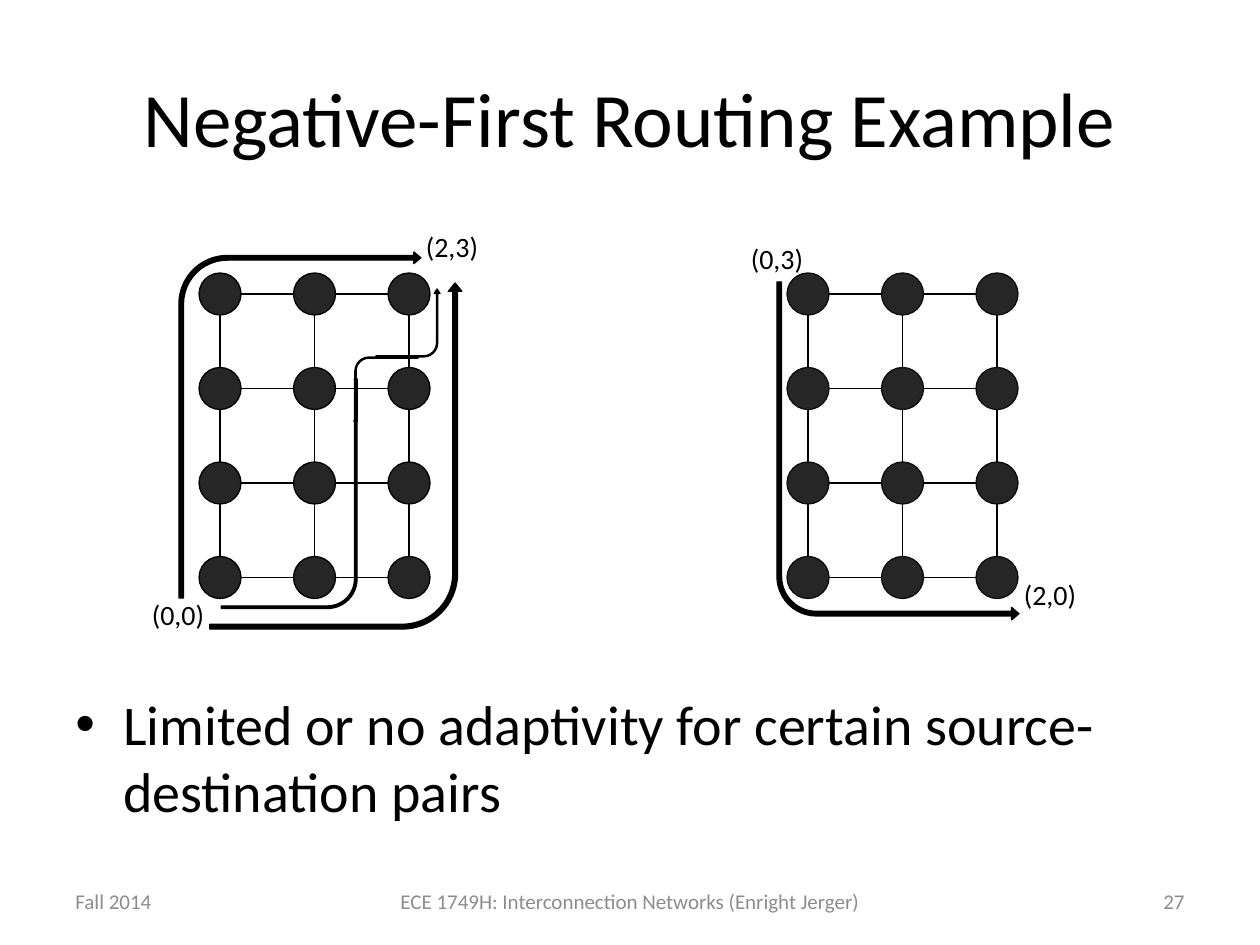
"""Build the slide on negative-first routing with two mesh networks."""
import pptx
import pptx.dml.color
import pptx.enum.shapes
import pptx.enum.text
import pptx.oxml
import pptx.oxml.ns
import pptx.util

SHAPE = pptx.enum.shapes.MSO_SHAPE
ALIGN = pptx.enum.text.PP_ALIGN
ANCHOR = pptx.enum.text.MSO_ANCHOR

PX_PER_INCH = 126
BLACK, GREY = "000000", "8C8C8C"
COLUMNS, ROWS = 3, 4
STEP = 189 / 2
NODE = 42
RADIUS = NODE / 2

TITLE = ("Negative-First Routing Example", (63, 38, 1134, 158), 44, BLACK, ALIGN.CENTER)
BULLET = ("Limited or no adaptivity for certain source-destination pairs",
          (63, 683, 1134, 161), 32, BLACK, ALIGN.LEFT)
FOOTERS = [
    ("Fall 2014", (63, 876, 294, 50), 12, GREY, ALIGN.LEFT),
    ("27", (903, 876, 294, 50), 12, GREY, ALIGN.RIGHT),
    ("ECE 1749H: Interconnection Networks (Enright Jerger)",
     (357, 876, 546, 50), 12, GREY, ALIGN.CENTER),
]
MESHES = [
    {
        "centre": (220, 294),
        "outline": BLACK,
        "routes": [
            ((179, 252, 242, 346), 0, None, (0.019, 0.024, 0.029, 0.2)),
            ((163, 330, 346, 252), 90, "flipH", (0.019, 0.027, 0.033, 0.219)),
            ((174, 425, 231, 136), 90, "flipH", (0.019, 0.012, 0.014, 0.219)),
            ((352, 359, 68, 64), 90, "flipV", (0.019, 0.025, 0.071, 0.219)),
            ((374, 291, 68, 64), 270, "flipV", (0.019, 0.046, 0.071, 0.219)),
        ],
        "labels": [("(0,0)", 136, 588), ("(2,3)", 410, 220)],
    },
    {
        "centre": (808, 294),
        "outline": "0D0D0D",
        "routes": [((777, 282, 242, 338), 0, "flipV", (0.019, 0.026, 0.03, 0.163))],
        "labels": [("(0,3)", 735, 232), ("(2,0)", 1008, 568)],
    },
]


def emu(*lengths):
    return [pptx.util.Inches(length / PX_PER_INCH) for length in lengths]


def colour(value):
    return pptx.dml.color.RGBColor.from_string(value)


def apply(target, **values):
    for name, value in values.items():
        setattr(target, name, value)


def add_text(page, text, place, size, ink, align, anchor=ANCHOR.MIDDLE):
    frame = page.shapes.add_textbox(*emu(*place)).text_frame
    apply(frame, word_wrap=True, vertical_anchor=anchor)
    para = frame.paragraphs[0]
    para.alignment = align
    span = para.add_run()
    span.text = text
    apply(span.font, name="Calibri", size=pptx.util.Pt(size))
    span.font.color.rgb = colour(ink)
    return para


def add_bullet(page):
    para = add_text(page, *BULLET, anchor=ANCHOR.TOP)
    para.space_before = pptx.util.Pt(6.4)
    properties = para._p.get_or_add_pPr()
    indent = pptx.util.Inches(0.38)
    properties.set("marL", str(indent))
    properties.set("indent", str(-indent))
    for tag, name, value in (("a:buFont", "typeface", "Arial"), ("a:buChar", "char", "•")):
        mark = pptx.oxml.parse_xml(f"<{tag} {pptx.oxml.ns.nsdecls('a')}/>")
        mark.set(name, value)
        properties.append(mark)


def add_filled(page, kind, place, fill, outline):
    shape = page.shapes.add_shape(kind, *emu(*place))
    shape.shadow.inherit = False
    shape.fill.solid()
    shape.fill.fore_color.rgb = colour(fill)
    shape.line.color.rgb = colour(outline)
    shape.line.width = pptx.util.Pt(0.75)
    return shape


def add_link(page, *ends):
    link = page.shapes.add_connector(pptx.enum.shapes.MSO_CONNECTOR.STRAIGHT, *emu(*ends))
    link.line.color.rgb = colour(BLACK)
    link.line.width = pptx.util.Pt(0.75)
    effects = pptx.oxml.parse_xml(f"<a:effectLst {pptx.oxml.ns.nsdecls('a')}/>")
    link._element.spPr.append(effects)


def add_route(page, place, rotation, flip, adjustments):
    route = add_filled(page, SHAPE.BENT_ARROW, place, BLACK, BLACK)
    route.rotation = rotation
    for index, value in enumerate(adjustments):
        route.adjustments[index] = value
    if flip:
        route._element.spPr.find(pptx.oxml.ns.qn("a:xfrm")).set(flip, "1")


def add_mesh(page, mesh):
    left, top = mesh["centre"]
    nodes = [(left + column * STEP, top + row * STEP)
             for row in range(ROWS) for column in range(COLUMNS)]
    for x, y in nodes:
        place = (x - RADIUS, y - RADIUS, NODE, NODE)
        add_filled(page, SHAPE.OVAL, place, "262626", mesh["outline"])
    for x, y in nodes:
        if (x, y + STEP) in nodes:
            add_link(page, x, y + RADIUS, x, y + STEP - RADIUS)
        if (x + STEP, y) in nodes:
            add_link(page, x + RADIUS, y, x + STEP - RADIUS, y)
    for route in mesh["routes"]:
        add_route(page, *route)
    for text, x, y in mesh["labels"]:
        add_text(page, text, (x, y, 84, 52), 16, BLACK, ALIGN.CENTER)


def main():
    deck = pptx.Presentation()
    deck.slide_width, deck.slide_height = emu(1260, 945)
    page = deck.slides.add_slide(deck.slide_layouts[6])
    add_text(page, *TITLE)
    add_bullet(page)
    for mesh in MESHES:
        add_mesh(page, mesh)
    for footer in FOOTERS:
        add_text(page, *footer)
    deck.save("out.pptx")


if __name__ == "__main__":
    main()
